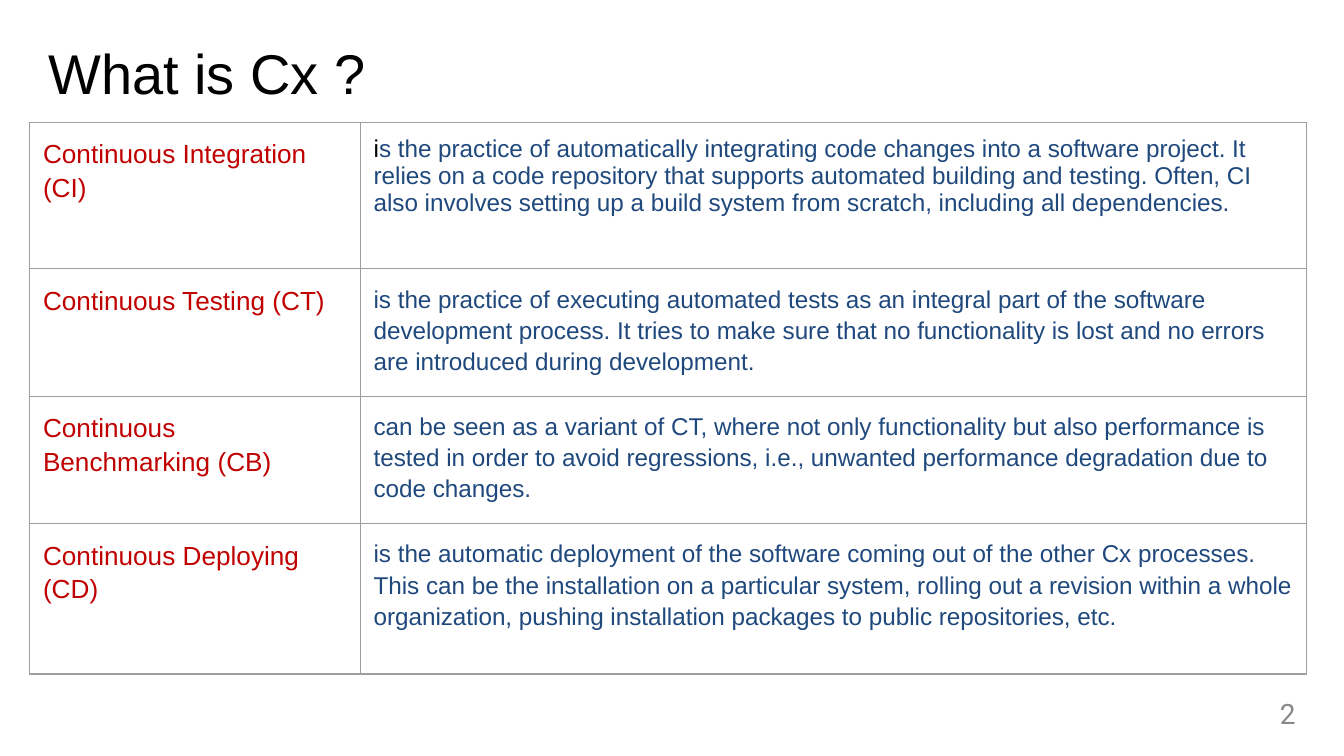
from lxml import etree
from pptx import Presentation
from pptx.dml.color import RGBColor
from pptx.enum.text import MSO_ANCHOR, PP_ALIGN
from pptx.oxml.ns import qn
from pptx.util import Inches, Pt

LEFT, RIGHT = PP_ALIGN.LEFT, PP_ALIGN.RIGHT
TOP, MIDDLE = MSO_ANCHOR.TOP, MSO_ANCHOR.MIDDLE
GRID = 0.1
BLACK, RED, BLUE, GREY, LINE = "000000", "C00000", "1F497D", "888888", "9E9E9E"

DEFINITIONS = [
    ("Continuous Integration (CI)",
     "is the practice of automatically integrating code changes into a software project. "
     "It relies on a code repository that supports automated building and testing. Often, "
     "CI also involves setting up a build system from scratch, including all dependencies."),
    ("Continuous Testing (CT)",
     "is the practice of executing automated tests as an integral part of the software "
     "development process. It tries to make sure that no functionality is lost and no "
     "errors are introduced during development."),
    ("Continuous Benchmarking (CB)",
     "can be seen as a variant of CT, where not only functionality but also performance is "
     "tested in order to avoid regressions, i.e., unwanted performance degradation due to "
     "code changes."),
    ("Continuous Deploying (CD)",
     "is the automatic deployment of the software coming out of the other Cx processes. "
     "This can be the installation on a particular system, rolling out a revision within a "
     "whole organization, pushing installation packages to public repositories, etc."),
]


def color(value):
    return RGBColor.from_string(value)


def grid(units):
    return Inches(units * GRID)


def write(frame, *runs, size, font="Arial", align=LEFT, spacing=1.0, after=0):
    paragraph = frame.paragraphs[0]
    paragraph.alignment = align
    paragraph.line_spacing = spacing
    paragraph.space_after = Pt(after)
    for text, hue in runs:
        run = paragraph.add_run()
        run.text = text
        run.font.size = Pt(size)
        run.font.name = font
        run.font.color.rgb = color(hue)


class SlideBuilder:
    """Draws styled elements on the current slide, placed in grid units."""

    def __init__(self, presentation):
        self.slide = presentation.slides.add_slide(presentation.slide_layouts[6])

    def text(self, content, left, top, width, height, hue=BLACK, anchor=TOP, **style):
        box = self.slide.shapes.add_textbox(*map(grid, (left, top, width, height)))
        frame = box.text_frame
        frame.word_wrap = True
        frame.vertical_anchor = anchor
        frame.margin_left = frame.margin_right = Inches(0.07)
        frame.margin_top = frame.margin_bottom = Inches(0.04)
        write(frame, (content, hue), **style)

    def border(self, cell):
        properties = cell._tc.get_or_add_tcPr()
        for position, side in enumerate(("a:lnL", "a:lnR", "a:lnT", "a:lnB")):
            line = etree.Element(qn(side), w=str(Pt(0.75)))
            fill = etree.SubElement(line, qn("a:solidFill"))
            etree.SubElement(fill, qn("a:srgbClr"), val=LINE)
            properties.insert(position, line)

    def cell(self, cell, *runs, **style):
        cell.fill.background()
        cell.margin_left = cell.margin_right = grid(1)
        cell.margin_top = cell.margin_bottom = grid(1)
        write(cell.text_frame, *runs, **style)
        self.border(cell)

    def table(self, rows, left, top, widths, heights):
        frame = self.slide.shapes.add_table(
            len(heights), len(widths), grid(left), grid(top),
            grid(sum(widths)), grid(sum(heights)))
        table = frame.table
        table.first_row = table.horz_banding = False
        for column, width in zip(table.columns, widths):
            column.width = grid(width)
        for index, (term, meaning) in enumerate(rows):
            table.rows[index].height = grid(heights[index])
            first = index == 0
            after = 0 if first else 12
            runs = [(meaning[0], BLACK), (meaning[1:], BLUE)] if first else [(meaning, BLUE)]
            self.cell(table.cell(index, 0), (term, RED), size=14, spacing=1.15, after=after)
            self.cell(table.cell(index, 1), *runs, size=13,
                      spacing=1.0 if first else 1.15, after=after)


def main():
    presentation = Presentation()
    presentation.slide_width = Inches(10)
    presentation.slide_height = presentation.slide_width * 9 // 16
    builder = SlideBuilder(presentation)
    builder.text("What is Cx ?", 2.9, 3, 56.5, 5.3, size=30, spacing=0.9)
    builder.table(DEFINITIONS, 2.2, 9.1, (24.6, 70.4), (10.9, 9.1, 9.1, 11.2))
    builder.text("2", 91.5, 51.4, 5.6, 3.3, hue=GREY, anchor=MIDDLE,
                 size=15, font="Roboto", align=RIGHT)
    presentation.save("out.pptx")


if __name__ == "__main__":
    main()
